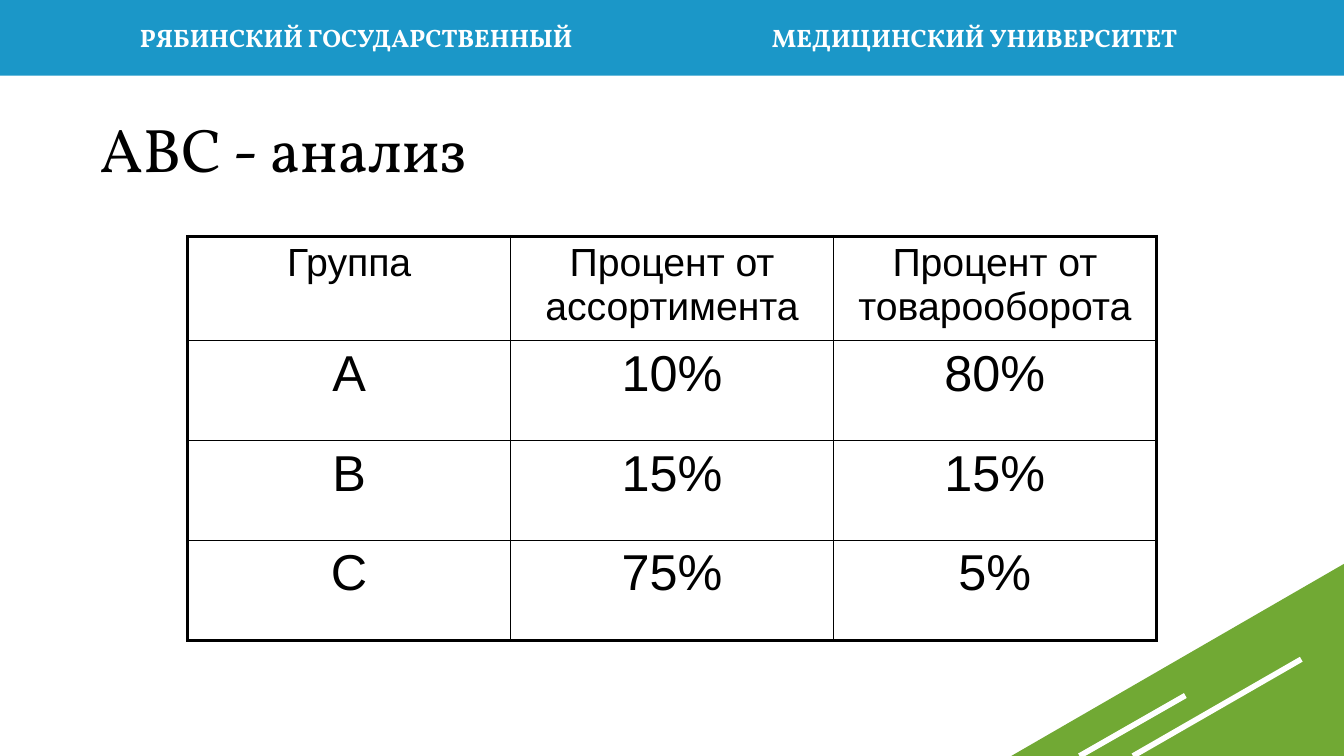
from lxml.etree import SubElement
from pptx import Presentation
from pptx.dml.color import RGBColor
from pptx.enum.shapes import MSO_CONNECTOR as Connector, MSO_SHAPE as Preset
from pptx.enum.text import MSO_ANCHOR as Anchor, MSO_AUTO_SIZE as AutoSize, PP_ALIGN as Align
from pptx.oxml import parse_xml
from pptx.oxml.ns import nsdecls, qn
from pptx.util import Pt

TITLE = "АВС - анализ"
UNIVERSITY = [
    ("РЯБИНСКИЙ ГОСУДАРСТВЕННЫЙ", 66.2, Align.RIGHT),
    ("МЕДИЦИНСКИЙ УНИВЕРСИТЕТ", 544.3, Align.LEFT),
]
GROUPS = [
    ("Группа", "Процент от ассортимента", "Процент от товарооборота"),
    ("А", "10%", "80%"),
    ("В", "15%", "15%"),
    ("С", "75%", "5%"),
]
STRIPES = [(771.1, 540, 846.7, 496.8), (809.3, 540, 929.5, 470.9)]

WIDTH, HEIGHT = 960, 540
TABLE_LEFT, TABLE_TOP, COLUMN_WIDTH = 134.1, 168.7, 230.6
HEADER_HEIGHT, ROW_HEIGHT = 74.3, 71.4
CORNER_WIDTH, CORNER_HEIGHT = 237.6, 137.2

THEME = {
    "blue": RGBColor(0x1B, 0x97, 0xC8),
    "green": RGBColor(0x71, 0xA9, 0x34),
    "white": RGBColor(0xFF, 0xFF, 0xFF),
    "black": RGBColor(0, 0, 0),
    "stripe": 4,
    "outer": 2.25,
    "inner": 1,
}
BANNER_FONT = {"name": "Vollkorn", "size": Pt(18), "bold": True}
TITLE_FONT = {"name": "Vollkorn", "size": Pt(44)}
HEADER_FONT = {"name": "Arial", "size": Pt(28)}
VALUE_FONT = {"name": "Arial", "size": Pt(36)}


def points(*lengths):
    return [Pt(length) for length in lengths]


def write(text_frame, text, font_format, color, align=Align.LEFT):
    paragraph = text_frame.paragraphs[0]
    paragraph.alignment = align
    run = paragraph.add_run()
    run.text = text
    for name, value in font_format.items():
        setattr(run.font, name, value)
    run.font.color.rgb = color
    return paragraph


def add_block(slide, preset, box, color):
    shape = slide.shapes.add_shape(preset, *points(*box))
    shape.shadow.inherit = False
    shape.fill.solid()
    shape.fill.fore_color.rgb = color
    shape.line.fill.background()
    return shape


def add_text(slide, box, text, font_format, color, align=Align.LEFT):
    text_box = slide.shapes.add_textbox(*points(*box))
    text_box.text_frame.word_wrap = True
    return text_box.text_frame, write(text_box.text_frame, text, font_format, color, align)


def add_stripe(slide, ends):
    stripe = slide.shapes.add_connector(Connector.STRAIGHT, *points(*ends))
    stripe.line.color.rgb = THEME["white"]
    stripe.line.width = Pt(THEME["stripe"])
    SubElement(stripe.element.spPr, qn("a:effectLst"))


def set_borders(cell, is_outer):
    """Draw the four sides, heavier where the side lies on the table's edge."""
    properties = cell._tc.get_or_add_tcPr()
    for position, (side, outer) in enumerate(is_outer.items()):
        width = Pt(THEME["outer" if outer else "inner"])
        properties.insert(position, parse_xml(
            f'<a:{side} {nsdecls("a")} w="{width}"><a:solidFill>'
            f'<a:srgbClr val="{THEME["black"]}"/></a:solidFill></a:{side}>'))


def add_group_table(slide):
    row_count, column_count = len(GROUPS), len(GROUPS[0])
    heights = [HEADER_HEIGHT] + [ROW_HEIGHT] * (row_count - 1)
    box = (TABLE_LEFT, TABLE_TOP, COLUMN_WIDTH * column_count, sum(heights))
    table = slide.shapes.add_table(row_count, column_count, *points(*box)).table
    table.first_row = table.horz_banding = False
    for column in table.columns:
        column.width = Pt(COLUMN_WIDTH)
    for i, texts in enumerate(GROUPS):
        table.rows[i].height = Pt(heights[i])
        for j, text in enumerate(texts):
            cell = table.cell(i, j)
            cell.fill.background()
            set_borders(cell, {
                "lnL": j == 0,
                "lnR": j == column_count - 1,
                "lnT": i == 0,
                "lnB": i == row_count - 1,
            })
            font_format = VALUE_FONT if i else HEADER_FONT
            write(cell.text_frame, text, font_format, THEME["black"], Align.CENTER)


def main():
    presentation = Presentation()
    presentation.slide_width, presentation.slide_height = points(WIDTH, HEIGHT)
    slide = presentation.slides.add_slide(presentation.slide_layouts[6])

    add_block(slide, Preset.RECTANGLE, (0, 0, WIDTH, 54), THEME["blue"])
    corner_box = (WIDTH - CORNER_WIDTH, HEIGHT - CORNER_HEIGHT, CORNER_WIDTH, CORNER_HEIGHT)
    corner = add_block(slide, Preset.RIGHT_TRIANGLE, corner_box, THEME["green"])
    corner.element.spPr.xfrm.set("flipH", "1")
    for ends in STRIPES:
        add_stripe(slide, ends)

    for text, left, align in UNIVERSITY:
        frame, _ = add_text(slide, (left, 12.2, 350, 29), text, BANNER_FONT, THEME["white"], align)
        frame.auto_size = AutoSize.SHAPE_TO_FIT_TEXT

    frame, paragraph = add_text(slide, (64.1, 64.1, 864, 90), TITLE, TITLE_FONT, THEME["black"])
    frame.vertical_anchor = Anchor.MIDDLE
    paragraph.line_spacing = 0.9

    add_group_table(slide)
    presentation.save("out.pptx")


if __name__ == "__main__":
    main()
